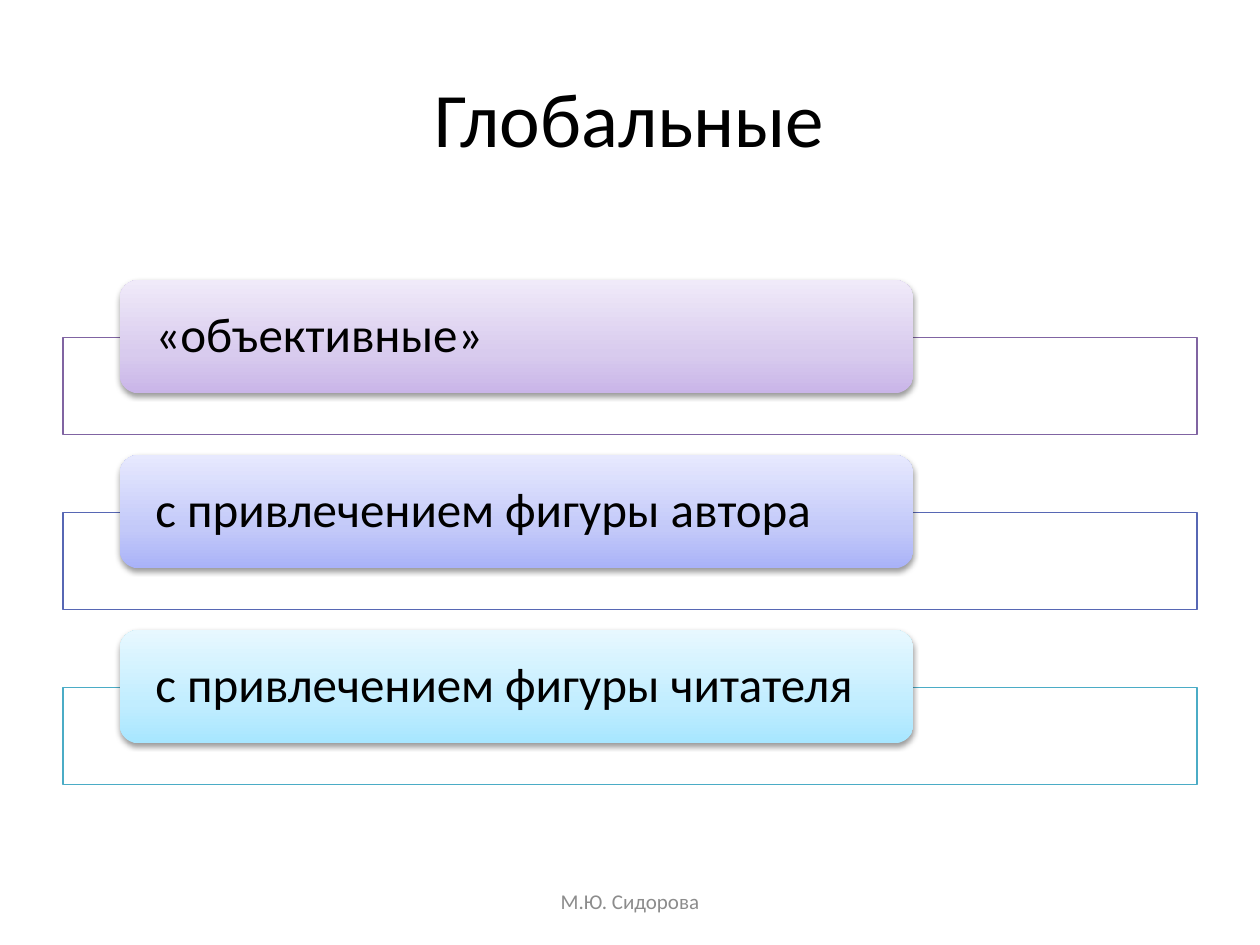
"""Build a slide with three framed gradient headings."""
from pptx import Presentation, util as u
from pptx.dml.color import RGBColor
from pptx.enum import shapes, text
from pptx.oxml import parse_xml
from pptx.oxml.ns import nsdecls, qn


def rgb(value):
    return RGBColor.from_string(value)


def write(sp, content, size, color, align, inset, spacing=1.0, after=0):
    tf = sp.text_frame
    frame = {"word_wrap": True, "auto_size": text.MSO_AUTO_SIZE.NONE,
             "vertical_anchor": text.MSO_ANCHOR.MIDDLE,
             "margin_left": u.Pt(inset), "margin_right": u.Pt(inset),
             "margin_top": 0, "margin_bottom": 0}
    for name, value in frame.items():
        setattr(tf, name, value)
    p = tf.paragraphs[0]
    for name, value in {"alignment": align, "line_spacing": spacing, "space_after": u.Pt(after)}.items():
        setattr(p, name, value)
    r = p.add_run()
    r.text = content
    for name, value in {"name": "Calibri", "size": u.Pt(size), "bold": False}.items():
        setattr(r.font, name, value)
    r.font.color.rgb = rgb(color)


prs = Presentation()
prs.slide_width, prs.slide_height = u.Pt(720), u.Pt(540)
s = prs.slides.add_slide(prs.slide_layouts[5])

title = s.shapes.title
box = {"left": 36, "top": 21.6, "width": 648, "height": 90}
for name, value in box.items():
    setattr(title, name, u.Pt(value))
write(title, "Глобальные", 44, "000000", text.PP_ALIGN.CENTER, 7.2)

items = [
    ("«объективные»", "8064A2", ("C9B5E8", "D8CBEE", "F0EAF9")),
    ("с привлечением фигуры автора", "5767B4", ("A9B2F8", "C3C9F9", "E7E9FE")),
    ("с привлечением фигуры читателя", "4BACC6", ("A7E6FF", "C1EDFF", "E7F8FF")),
]
first_top, pitch = 160, 100

for i, (label, line, colors) in enumerate(items):
    top = first_top + i * pitch
    frame = s.shapes.add_shape(shapes.MSO_SHAPE.RECTANGLE,
                               u.Pt(36), u.Pt(top + 32.7), u.Pt(648), u.Pt(55.44))
    frame.shadow.inherit = False
    frame.fill.solid()
    frame.fill.fore_color.rgb = rgb("FFFFFF")
    frame.line.color.rgb = rgb(line)
    frame.line.width = u.Pt(0.75)
    white = frame.fill._xPr.find(qn("a:solidFill"))[0]
    white.append(parse_xml(f'<a:alpha {nsdecls("a")} val="90000"/>'))

    heading = s.shapes.add_shape(shapes.MSO_SHAPE.ROUNDED_RECTANGLE,
                                 u.Pt(68.4), u.Pt(top), u.Pt(453.6), u.Pt(64.8))
    heading.shadow.inherit = False
    heading.line.fill.background()
    stops = "".join(f'<a:gs pos="{pos}"><a:srgbClr val="{c}"/></a:gs>'
                    for pos, c in zip((0, 35000, 100000), colors))
    spPr = heading._element.spPr
    spPr.find(qn("a:prstGeom")).addnext(parse_xml(
        f'<a:gradFill {nsdecls("a")} rotWithShape="1"><a:gsLst>{stops}</a:gsLst>'
        '<a:lin ang="16200000" scaled="1"/></a:gradFill>'))
    spPr.find(qn("a:effectLst")).append(parse_xml(
        f'<a:outerShdw {nsdecls("a")} blurRad="{u.Pt(3.1)}" dist="{u.Pt(1.6)}" dir="5400000" '
        'rotWithShape="0"><a:srgbClr val="000000"><a:alpha val="38000"/></a:srgbClr></a:outerShdw>'))
    write(heading, label, 28, "000000", text.PP_ALIGN.LEFT, 17.28, 0.9, 9.8)
    after = heading.text_frame.paragraphs[0]._p.pPr.find(qn("a:spcAft"))
    after.replace(after[0], parse_xml(f'<a:spcPct {nsdecls("a")} val="35000"/>'))

footer = s.shapes.add_textbox(u.Pt(246), u.Pt(500.5), u.Pt(228), u.Pt(28.75))
write(footer, "М.Ю. Сидорова", 12, "8C8C8C", text.PP_ALIGN.CENTER, 7.2)

prs.save("out.pptx")
